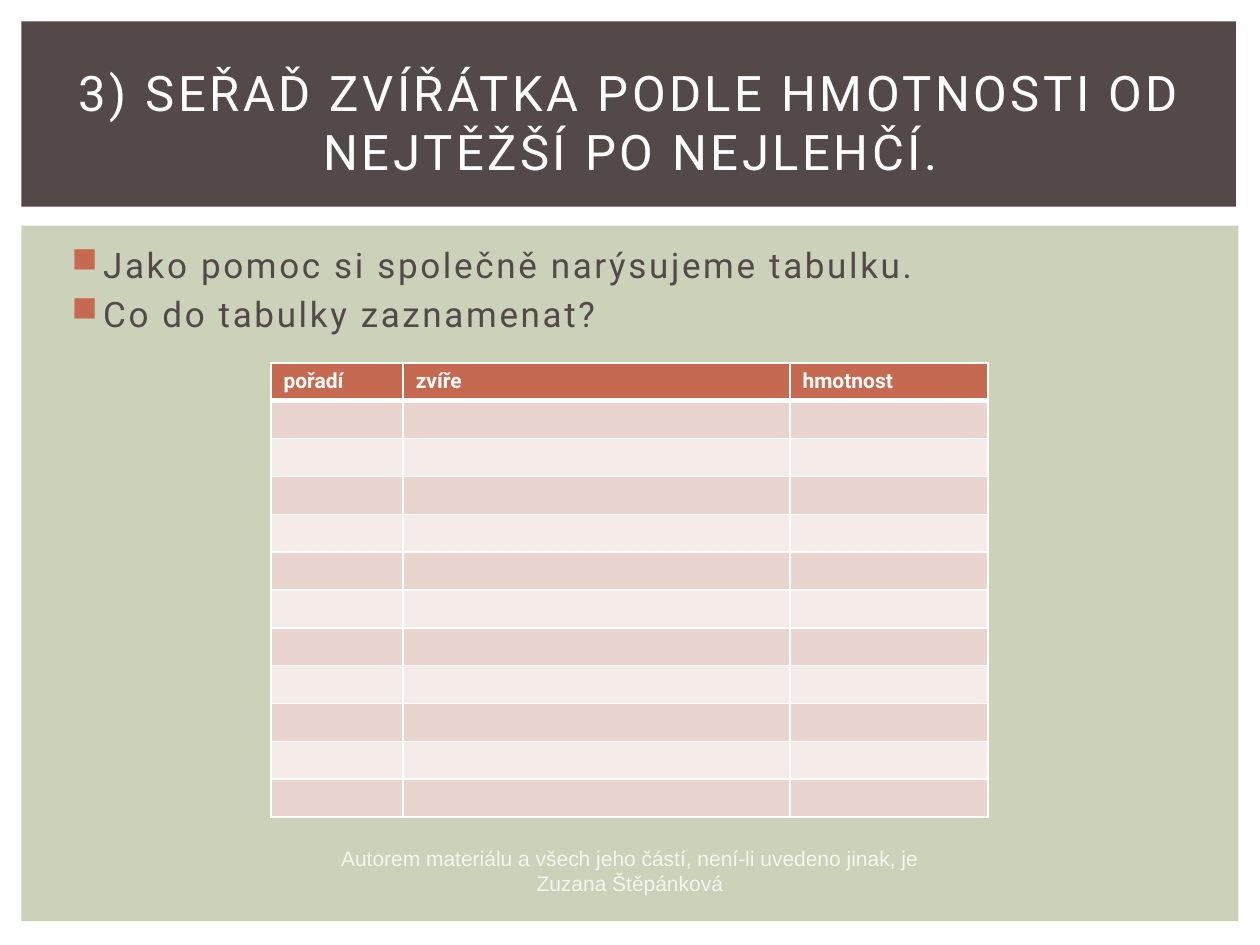
"""Build a worksheet slide with a heading, two prompts and an empty ranking table."""
from lxml.etree import SubElement
from pptx import Presentation
from pptx.dml.color import RGBColor
from pptx.enum.shapes import MSO_SHAPE as Shape
from pptx.enum.text import MSO_ANCHOR as Anchor, PP_ALIGN as Align
from pptx.oxml.ns import qn
from pptx.util import Inches, Pt

TITLE = "3) SEŘAĎ ZVÍŘÁTKA PODLE HMOTNOSTI OD NEJTĚŽŠÍ PO NEJLEHČÍ."
PROMPTS = ["Jako pomoc si společně narýsujeme tabulku.", "Co do tabulky zaznamenat?"]
CREDIT = "Autorem materiálu a všech jeho částí, není-li uvedeno jinak, je Zuzana Štěpánková"
COLUMNS = [("pořadí", 1.05), ("zvíře", 3.07), ("hmotnost", 1.57)]
EMPTY_ROWS = 11
ROW_HEIGHT = 0.3

WHITE = RGBColor(0xFF, 0xFF, 0xFF)
BROWN = RGBColor(0x53, 0x49, 0x49)
SAGE = RGBColor(0xCC, 0xD1, 0xB9)
RUST = RGBColor(0xC6, 0x69, 0x51)
PALE = RGBColor(0xF5, 0xF6, 0xF1)
BANDS = [RGBColor(0xEA, 0xD4, 0xD0), RGBColor(0xF5, 0xEB, 0xE9)]


def add_panel(slide, box, color):
    panel = slide.shapes.add_shape(Shape.RECTANGLE, *map(Inches, box))
    panel.shadow.inherit = False
    panel.fill.solid()
    panel.fill.fore_color.rgb = color
    panel.line.fill.background()


def add_frame(slide, box, anchor=Anchor.TOP):
    frame = slide.shapes.add_textbox(*map(Inches, box)).text_frame
    frame.word_wrap = True
    frame.vertical_anchor = anchor
    return frame


def write(paragraph, text, size, color, font="Roboto", bold=False, align=Align.LEFT, spacing=0):
    paragraph.alignment = align
    run = paragraph.add_run()
    run.text = text
    run.font.size = Pt(size)
    run.font.name = font
    run.font.bold = bold
    run.font.color.rgb = color
    if spacing:
        run.font._element.set("spc", str(int(spacing * 100)))


def add_bullet(paragraph, color):
    paragraph.space_before = Pt(4)
    properties = paragraph._p.get_or_add_pPr()
    properties.set("marL", str(Inches(0.3)))
    properties.set("indent", str(Inches(-0.25)))
    bullet_color = SubElement(properties, qn("a:buClr"))
    SubElement(bullet_color, qn("a:srgbClr"), val=str(color))
    SubElement(properties, qn("a:buChar"), char="■")


def style_cell(cell, color, bottom=1):
    properties = cell._tc.get_or_add_tcPr()
    for side, width in {"L": 1, "R": 1, "T": 1, "B": bottom}.items():
        border = SubElement(properties, qn(f"a:ln{side}"), w=str(Pt(width)))
        fill = SubElement(border, qn("a:solidFill"))
        SubElement(fill, qn("a:srgbClr"), val=str(WHITE))
    cell.fill.solid()
    cell.fill.fore_color.rgb = color


def add_ranking(slide, left, top):
    width = sum(share for _, share in COLUMNS)
    box = (left, top, width, ROW_HEIGHT * (EMPTY_ROWS + 1))
    table = slide.shapes.add_table(EMPTY_ROWS + 1, len(COLUMNS), *map(Inches, box)).table
    for column, (heading, share) in enumerate(COLUMNS):
        table.columns[column].width = Inches(share)
        header = table.cell(0, column)
        style_cell(header, RUST, bottom=3)
        write(header.text_frame.paragraphs[0], heading, 12, WHITE, bold=True)
        for row in range(1, EMPTY_ROWS + 1):
            cell = table.cell(row, column)
            style_cell(cell, BANDS[(row - 1) % 2])
            SubElement(cell.text_frame.paragraphs[0]._p, qn("a:endParaRPr"), sz="1200")
            if row == 1:
                cell._tc.tcPr.find(qn("a:lnT")).set("w", str(Pt(3)))


def main():
    deck = Presentation()
    deck.slide_width, deck.slide_height = Inches(10), Inches(7.5)
    slide = deck.slides.add_slide(deck.slide_layouts[6])

    add_panel(slide, (0.17, 1.79, 9.66, 5.52), SAGE)
    add_panel(slide, (0.17, 0.17, 9.64, 1.47), BROWN)

    prompts = add_frame(slide, (0.42, 1.88, 9.19, 4.82))
    for index, prompt in enumerate(PROMPTS):
        paragraph = prompts.add_paragraph() if index else prompts.paragraphs[0]
        write(paragraph, prompt, 20, BROWN, spacing=1.5)
        add_bullet(paragraph, RUST)

    heading = add_frame(slide, (0.42, 0.39, 9.17, 1.15), Anchor.MIDDLE)
    write(heading.paragraphs[0], TITLE, 28, WHITE, align=Align.CENTER, spacing=2)
    credit = add_frame(slide, (2.5, 6.66, 5, 0.5))
    write(credit.paragraphs[0], CREDIT, 12, PALE, font="Arial", align=Align.CENTER)

    add_ranking(slide, 2.15, 2.88)
    deck.save("out.pptx")


if __name__ == "__main__":
    main()
